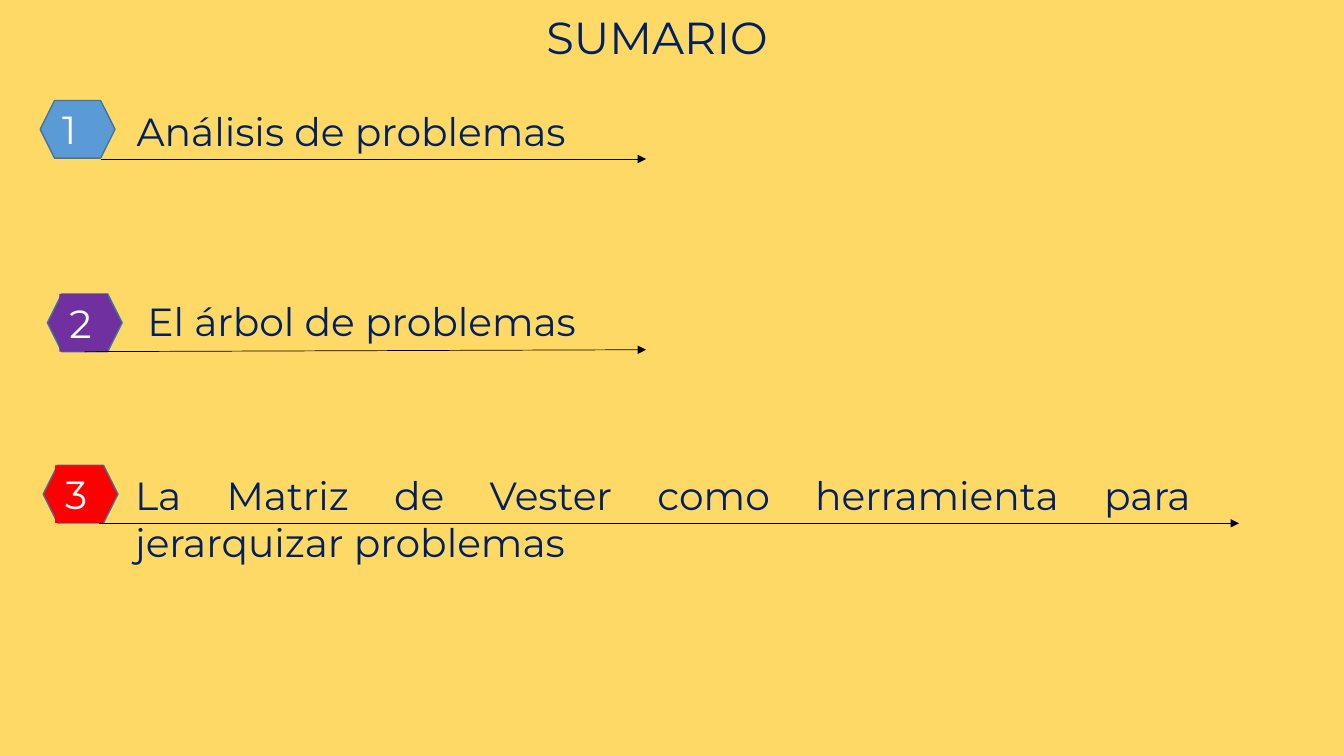
from lxml.etree import SubElement
from pptx import Presentation
from pptx.dml.color import RGBColor
from pptx.enum.shapes import MSO_CONNECTOR as CONN, MSO_SHAPE as SHAPE
from pptx.enum.text import MSO_ANCHOR as ANCHOR, MSO_AUTO_SIZE as AUTO, PP_ALIGN as ALIGN
from pptx.oxml.ns import qn
from pptx.util import Pt

FONT = "Montserrat"
COLORS = {"background": "FFD966", "text": "002060", "number": "FFFFFF", "arrow": "000000",
          "outline": "43739E", "blue": "5B9BD5", "purple": "7030A0", "red": "FF0000"}
TITLE = "SUMARIO"
# Badges: left, top, color, whether the number box is filled.
# Texts: left, top, width, height. Arrows: x1, y1, x2, y2.
TOPICS = [
    {"text": "Análisis de problemas", "badge": (28.7, 71.8, "blue", False),
     "box": (90.5, 73, 361.5, 41.2), "arrow": (72, 113.6, 461.5, 113.6), "align": ALIGN.LEFT},
    {"text": "El árbol de problemas", "badge": (33.8, 210, "purple", True),
     "box": (98.2, 209, 353.5, 41.2), "arrow": (60.5, 251.2, 461.5, 249.8), "align": ALIGN.LEFT},
    {"text": "La Matriz de Vester como herramienta para jerarquizar problemas",
     "badge": (30.8, 332.4, "red", True),
     "box": (89.4, 333.3, 768.2, 75), "arrow": (70.6, 373.8, 885, 373.8), "align": ALIGN.JUSTIFY},
]
BADGE_W, BADGE_H = 53.5, 41.2
NUMBER_INSET, NUMBER_W = 8.6, 34.5


def rgb(name):
    return RGBColor.from_string(COLORS[name])


def write(sp, text, size=28, color="text", align=ALIGN.LEFT):
    tf = sp.text_frame
    tf.word_wrap = True
    tf.auto_size = AUTO.NONE
    tf.vertical_anchor = ANCHOR.TOP
    p = tf.paragraphs[0]
    p.alignment = align
    r = p.add_run()
    r.text = text
    r.font.name, r.font.size = FONT, Pt(size)
    r.font.color.rgb = rgb(color)


def add_text(shapes, text, box, **style):
    sp = shapes.add_textbox(*map(Pt, box))
    write(sp, text, **style)
    return sp


def add_filled(shapes, kind, box, fill, outline=None):
    sp = shapes.add_shape(kind, *map(Pt, box))
    sp.shadow.inherit = False
    sp.fill.solid()
    sp.fill.fore_color.rgb = rgb(fill)
    if outline:
        sp.line.color.rgb = rgb(outline)
        sp.line.width = Pt(1)
    else:
        sp.line.fill.background()
    return sp


def add_badge(s, number, left, top, color, filled):
    shapes = s.shapes.add_group_shape().shapes
    add_filled(shapes, SHAPE.HEXAGON, (left, top, BADGE_W, BADGE_H), color, "outline")
    sp = add_text(shapes, str(number), (left + NUMBER_INSET, top, NUMBER_W, BADGE_H),
                  color="number")
    if filled:
        sp.fill.solid()
        sp.fill.fore_color.rgb = rgb(color)


def add_arrow(s, ends):
    line = s.shapes.add_connector(CONN.STRAIGHT, *map(Pt, ends))
    line.line.color.rgb = rgb("arrow")
    line.line.width = Pt(0.5)
    SubElement(line.line._get_or_add_ln(), qn("a:tailEnd"), type="triangle")
    SubElement(line._element.spPr, qn("a:effectLst"))


def main():
    prs = Presentation()
    prs.slide_width, prs.slide_height = Pt(960), Pt(540)
    s = prs.slides.add_slide(prs.slide_layouts[5])

    backdrop = add_filled(s.shapes, SHAPE.RECTANGLE, (0, 0, 960, 540), "background")
    title = s.shapes.title
    backdrop._element.addnext(title._element)  # keeps the title above the backdrop
    title.left, title.top, title.width, title.height = map(Pt, (383, 3.6, 195, 46))
    write(title, TITLE, size=32)

    for number, topic in enumerate(TOPICS, 1):
        add_badge(s, number, *topic["badge"])
        add_arrow(s, topic["arrow"])
        add_text(s.shapes, topic["text"], topic["box"], align=topic["align"])

    prs.save("out.pptx")


if __name__ == "__main__":
    main()
